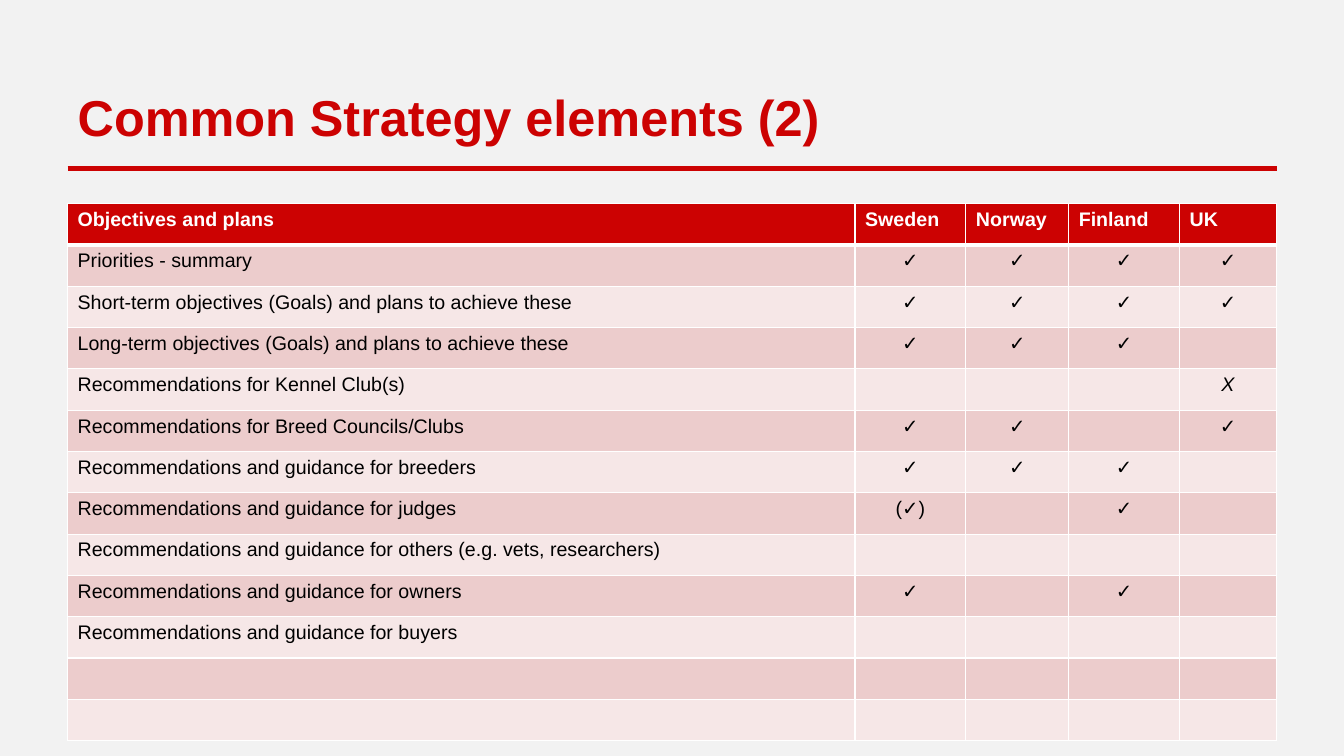
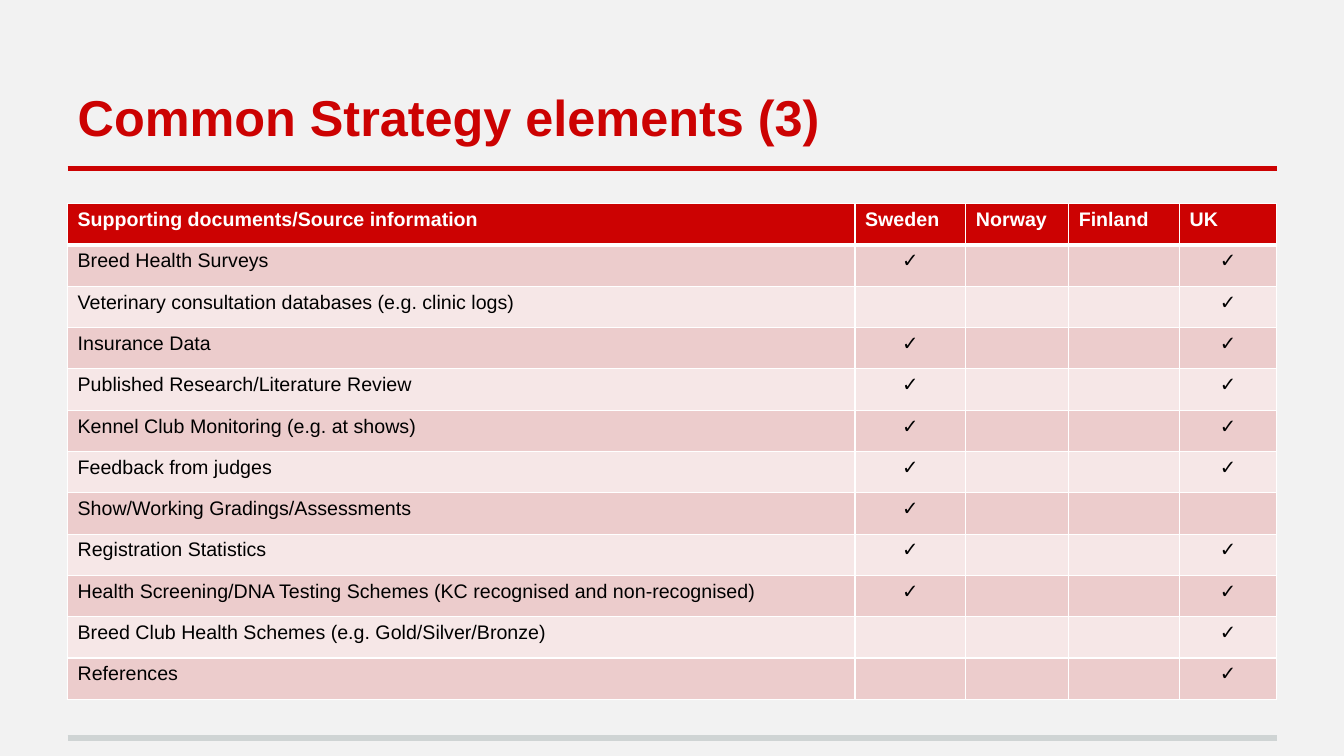
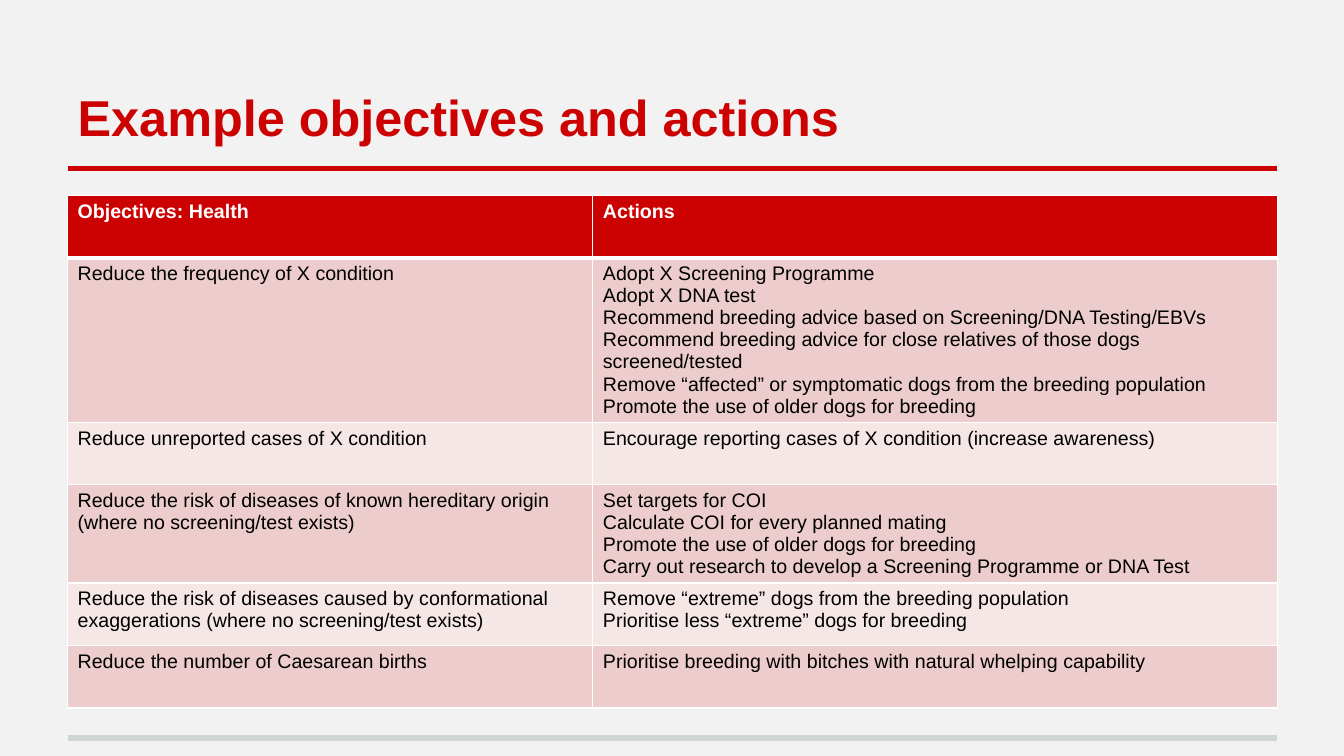
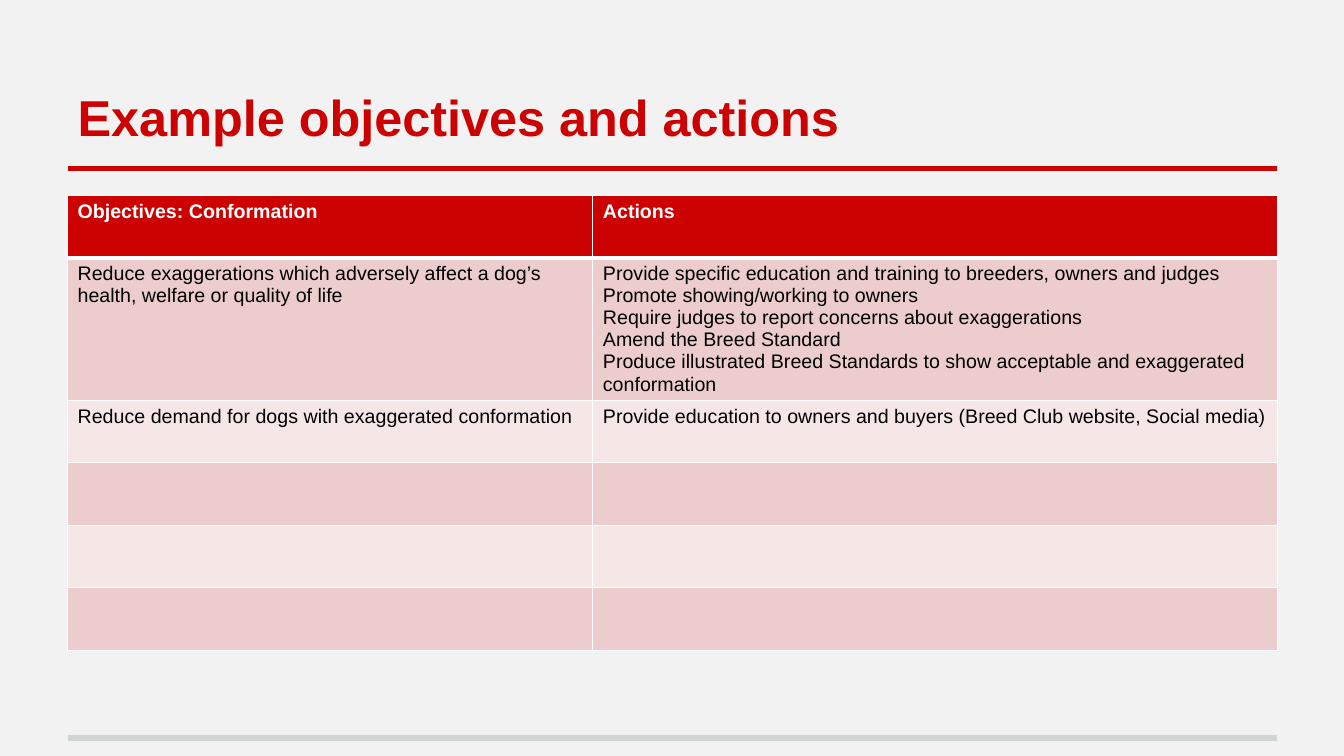
from pptx import Presentation
from pptx.dml.color import RGBColor
from pptx.enum.shapes import MSO_CONNECTOR
from pptx.enum.text import MSO_ANCHOR, MSO_AUTO_SIZE, PP_ALIGN
from pptx.oxml.ns import qn
from pptx.util import Inches, Pt
from lxml.etree import SubElement

# Shared style
FONT = "Arial"
RED = RGBColor(0xCC, 0x02, 0x02)
GREY = RGBColor(0xCF, 0xD4, 0xD4)
PAPER = RGBColor(0xF2, 0xF2, 0xF2)
WHITE = RGBColor(0xFF, 0xFF, 0xFF)
BLACK = RGBColor(0, 0, 0)
BANDS = RGBColor(0xEC, 0xCC, 0xCC), RGBColor(0xF6, 0xE7, 0xE7)
LEFT, WIDTH = Inches(0.67), Inches(12)
RULES = [(7.32, GREY), (1.67, RED)]

# Table kinds: geometry and alignment of the columns after the first
CHECKLIST = dict(top=2.02, row_height=0.41, cols=[7.81, 1.1, 1.02, 1.1, 0.96],
                 align=PP_ALIGN.CENTER)
ACTIONS = dict(top=1.94, row_height=0.62, cols=[5.21, 6.79], align=PP_ALIGN.LEFT)

# Content: title, table kind, rows (the first is the header)
Y, N = "✓", ""
COUNTRIES = ("Sweden", "Norway", "Finland", "UK")
SLIDES = [
    ("Common Strategy elements (2)", CHECKLIST, [
        ("Objectives and plans", *COUNTRIES),
        ("Priorities - summary", Y, Y, Y, Y),
        ("Short-term objectives (Goals) and plans to achieve these", Y, Y, Y, Y),
        ("Long-term objectives (Goals) and plans to achieve these", Y, Y, Y, N),
        ("Recommendations for Kennel Club(s)", N, N, N, "X"),
        ("Recommendations for Breed Councils/Clubs", Y, Y, N, Y),
        ("Recommendations and guidance for breeders", Y, Y, Y, N),
        ("Recommendations and guidance for judges", "(✓)", N, Y, N),
        ("Recommendations and guidance for others (e.g. vets, researchers)", N, N, N, N),
        ("Recommendations and guidance for owners", Y, N, Y, N),
        ("Recommendations and guidance for buyers", N, N, N, N),
        (N,) * 5,
        (N,) * 5,
    ]),
    ("Common Strategy elements (3)", CHECKLIST, [
        ("Supporting documents/Source information", *COUNTRIES),
        ("Breed Health Surveys", Y, N, N, Y),
        ("Veterinary consultation databases (e.g. clinic logs)", N, N, N, Y),
        ("Insurance Data", Y, N, N, Y),
        ("Published Research/Literature Review", Y, N, N, Y),
        ("Kennel Club Monitoring (e.g. at shows)", Y, N, N, Y),
        ("Feedback from judges", Y, N, N, Y),
        ("Show/Working Gradings/Assessments", Y, N, N, N),
        ("Registration Statistics", Y, N, N, Y),
        ("Health Screening/DNA Testing Schemes (KC recognised and non-recognised)",
         Y, N, N, Y),
        ("Breed Club Health Schemes (e.g. Gold/Silver/Bronze)", N, N, N, Y),
        ("References", N, N, N, Y),
    ]),
    ("Example objectives and actions", ACTIONS, [
        ("Objectives: Health", "Actions"),
        ("Reduce the frequency of X condition",
         "Adopt X Screening Programme\n"
         "Adopt X DNA test\n"
         "Recommend breeding advice based on Screening/DNA Testing/EBVs\n"
         "Recommend breeding advice for close relatives of those dogs screened/tested\n"
         "Remove “affected” or symptomatic dogs from the breeding population\n"
         "Promote the use of older dogs for breeding"),
        ("Reduce unreported cases of X condition",
         "Encourage reporting cases of X condition (increase awareness)"),
        ("Reduce the risk of diseases of known hereditary origin "
         "(where no screening/test exists)",
         "Set targets for COI\n"
         "Calculate COI for every planned mating\n"
         "Promote the use of older dogs for breeding\n"
         "Carry out research to develop a Screening Programme or DNA Test"),
        ("Reduce the risk of diseases caused by conformational exaggerations "
         "(where no screening/test exists)",
         "Remove “extreme” dogs from the breeding population\n"
         "Prioritise less “extreme” dogs for breeding"),
        ("Reduce the number of Caesarean births",
         "Prioritise breeding with bitches with natural whelping capability"),
    ]),
    ("Example objectives and actions", ACTIONS, [
        ("Objectives: Conformation", "Actions"),
        ("Reduce exaggerations which adversely affect a dog’s health, "
         "welfare or quality of life",
         "Provide specific education and training to breeders, owners and judges\n"
         "Promote showing/working to owners\n"
         "Require judges to report concerns about exaggerations\n"
         "Amend the Breed Standard\n"
         "Produce illustrated Breed Standards to show acceptable and exaggerated "
         "conformation"),
        ("Reduce demand for dogs with exaggerated conformation",
         "Provide education to owners and buyers (Breed Club website, Social media)"),
        (N, N),
        (N, N),
        (N, N),
    ]),
]


def write(tf, text, size=14, color=BLACK, bold=False, italic=False,
          align=PP_ALIGN.LEFT):
    """Fill a text frame, one paragraph per line of text."""
    tf.text = text
    for p in tf.paragraphs:
        p.alignment = align
        for r in p.runs:
            f = r.font
            f.name, f.size, f.bold, f.italic = FONT, Pt(size), bold, italic
            f.color.rgb = color


def add_rule(s, y, color):
    line = s.shapes.add_connector(MSO_CONNECTOR.STRAIGHT, LEFT, Inches(y),
                                  LEFT + WIDTH, Inches(y))
    line.line.color.rgb = color
    line.line.width = Pt(4)
    SubElement(line._element.spPr, qn("a:effectLst"))


def set_borders(cell, top=1, bottom=1):
    tcPr = cell._tc.get_or_add_tcPr()
    for side, width in (("L", 1), ("R", 1), ("T", top), ("B", bottom)):
        ln = SubElement(tcPr, qn("a:ln" + side), w=str(Pt(width)))
        SubElement(SubElement(ln, qn("a:solidFill")), qn("a:srgbClr"), val=str(WHITE))


def add_grid(s, rows, top, row_height, cols, align):
    height = Inches(row_height)
    table = s.shapes.add_table(len(rows), len(cols), LEFT, Inches(top), WIDTH,
                               height * len(rows)).table
    for col, width in zip(table.columns, cols):
        col.width = Inches(width)
    for i, texts in enumerate(rows):
        table.rows[i].height = height
        header = i == 0
        for j, text in enumerate(texts):
            cell = table.cell(i, j)
            # The heavy border lies between the header and the first row
            set_borders(cell, top=3 if i == 1 else 1, bottom=3 if header else 1)
            cell.fill.solid()
            cell.fill.fore_color.rgb = RED if header else BANDS[(i - 1) % 2]
            write(cell.text_frame, text, color=WHITE if header else BLACK,
                  bold=header, italic=text == "X",
                  align=align if j and not header else PP_ALIGN.LEFT)


def add_title(s, text):
    sp = s.shapes.title
    sp.left, sp.top, sp.width, sp.height = LEFT, Inches(0.3), WIDTH, Inches(1.25)
    tf = sp.text_frame
    tf.word_wrap = True
    tf.auto_size = MSO_AUTO_SIZE.NONE
    tf.vertical_anchor = MSO_ANCHOR.BOTTOM
    tf.margin_left = tf.margin_right = tf.margin_top = tf.margin_bottom = Inches(0.1)
    write(tf, text, size=36, color=RED, bold=True)


def main():
    prs = Presentation()
    prs.slide_width, prs.slide_height = Inches(13.33), Inches(7.5)
    fill = prs.slide_master.background.fill
    fill.solid()
    fill.fore_color.rgb = PAPER
    title_only = prs.slide_layouts[5]
    for title, kind, rows in SLIDES:
        s = prs.slides.add_slide(title_only)
        for y, color in RULES:
            add_rule(s, y, color)
        add_title(s, title)
        add_grid(s, rows, **kind)
    prs.save("out.pptx")


if __name__ == "__main__":
    main()
